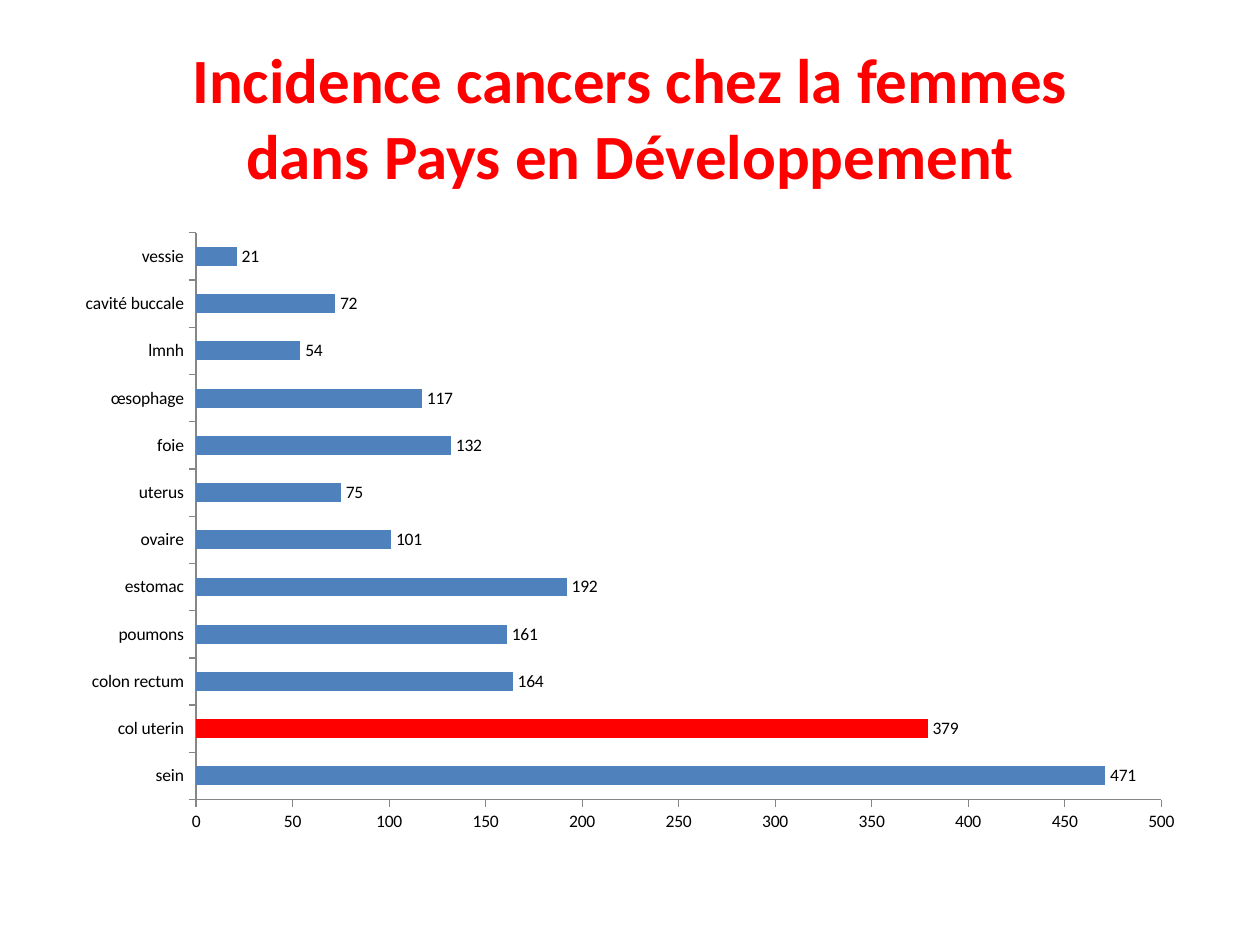
from typing import NamedTuple

from pptx import Presentation
from pptx.chart.axis import _BaseAxis as Axis
from pptx.chart.data import CategoryChartData as ChartData
from pptx.dml.color import RGBColor
from pptx.enum.chart import XL_CHART_TYPE as ChartType
from pptx.enum.chart import XL_LABEL_POSITION as LabelPosition
from pptx.enum.chart import XL_TICK_MARK as TickMark
from pptx.enum.text import MSO_ANCHOR as Anchor
from pptx.enum.text import PP_ALIGN as Align
from pptx.slide import Slide
from pptx.text.text import Font
from pptx.util import Inches, Pt

RED = RGBColor(0xFF, 0x00, 0x00)
BLUE = RGBColor(0x4F, 0x81, 0xBD)
BLACK = RGBColor(0x00, 0x00, 0x00)
GREY = RGBColor(0x86, 0x86, 0x86)

TITLE_FONT = {"name": "Calibri", "size": Pt(36), "bold": True}
CHART_FONT = {"name": "Calibri", "size": Pt(10), "bold": False}
AXIS_FORMAT = {
    "has_major_gridlines": False,
    "major_tick_mark": TickMark.OUTSIDE,
    "minor_tick_mark": TickMark.NONE,
}
LABEL_FORMAT = {"show_value": True, "position": LabelPosition.OUTSIDE_END}
TITLE_LINES = ("Incidence cancers chez la femmes", "dans Pays en Développement")


class Cancer(NamedTuple):
    site: str
    incidence: int
    color: RGBColor = BLUE


CANCERS = [
    Cancer("sein", 471),
    Cancer("col uterin", 379, RED),
    Cancer("colon rectum", 164),
    Cancer("poumons", 161),
    Cancer("estomac", 192),
    Cancer("ovaire", 101),
    Cancer("uterus", 75),
    Cancer("foie", 132),
    Cancer("œsophage", 117),
    Cancer("lmnh", 54),
    Cancer("cavité buccale", 72),
    Cancer("vessie", 21),
]


def apply_format(target: object, values: dict) -> None:
    for name, value in values.items():
        setattr(target, name, value)


def format_font(font: Font, values: dict, color: RGBColor) -> None:
    apply_format(font, values)
    font.color.rgb = color


def format_axis(axis: Axis) -> None:
    apply_format(axis, AXIS_FORMAT)
    axis.format.line.color.rgb = GREY
    axis.format.line.width = Pt(0.75)


def add_title(slide: Slide) -> None:
    title = slide.shapes.add_textbox(Inches(0.5), Inches(0.3), Inches(9), Inches(1.25))
    apply_format(title.text_frame, {"word_wrap": True, "vertical_anchor": Anchor.MIDDLE})
    heading = title.text_frame.paragraphs[0]
    heading.alignment = Align.CENTER
    for index, line in enumerate(TITLE_LINES):
        if index:
            heading.add_line_break()
        words = heading.add_run()
        words.text = line
        format_font(words.font, TITLE_FONT, RED)


def add_incidence_chart(slide: Slide) -> None:
    incidence = ChartData(number_format="General")
    incidence.categories = [cancer.site for cancer in CANCERS]
    incidence.add_series("Series 1", [cancer.incidence for cancer in CANCERS])
    chart = slide.shapes.add_chart(
        ChartType.BAR_CLUSTERED,
        Inches(0.5), Inches(1.75), Inches(9), Inches(4.95),
        incidence,
    ).chart
    apply_format(chart, {"has_legend": False, "has_title": False})
    format_font(chart.font, CHART_FONT, BLACK)
    for axis in (chart.category_axis, chart.value_axis):
        format_axis(axis)
    apply_format(
        chart.value_axis,
        {"minimum_scale": 0, "maximum_scale": 500, "major_unit": 50},
    )

    bars = chart.plots[0]
    apply_format(bars, {"gap_width": 150, "vary_by_categories": False})
    series = bars.series[0]
    series.format.fill.solid()
    series.format.fill.fore_color.rgb = BLUE
    for index, cancer in enumerate(CANCERS):
        if cancer.color != BLUE:
            fill = series.points[index].format.fill
            fill.solid()
            fill.fore_color.rgb = cancer.color
    apply_format(series.data_labels, LABEL_FORMAT)
    format_font(series.data_labels.font, CHART_FONT, BLACK)


def main() -> None:
    """Build the slide on cancer incidence among women."""
    deck = Presentation()
    apply_format(deck, {"slide_width": Inches(10), "slide_height": Inches(7.5)})
    slide = deck.slides.add_slide(deck.slide_layouts[6])
    add_title(slide)
    add_incidence_chart(slide)
    deck.save("out.pptx")


if __name__ == "__main__":
    main()
